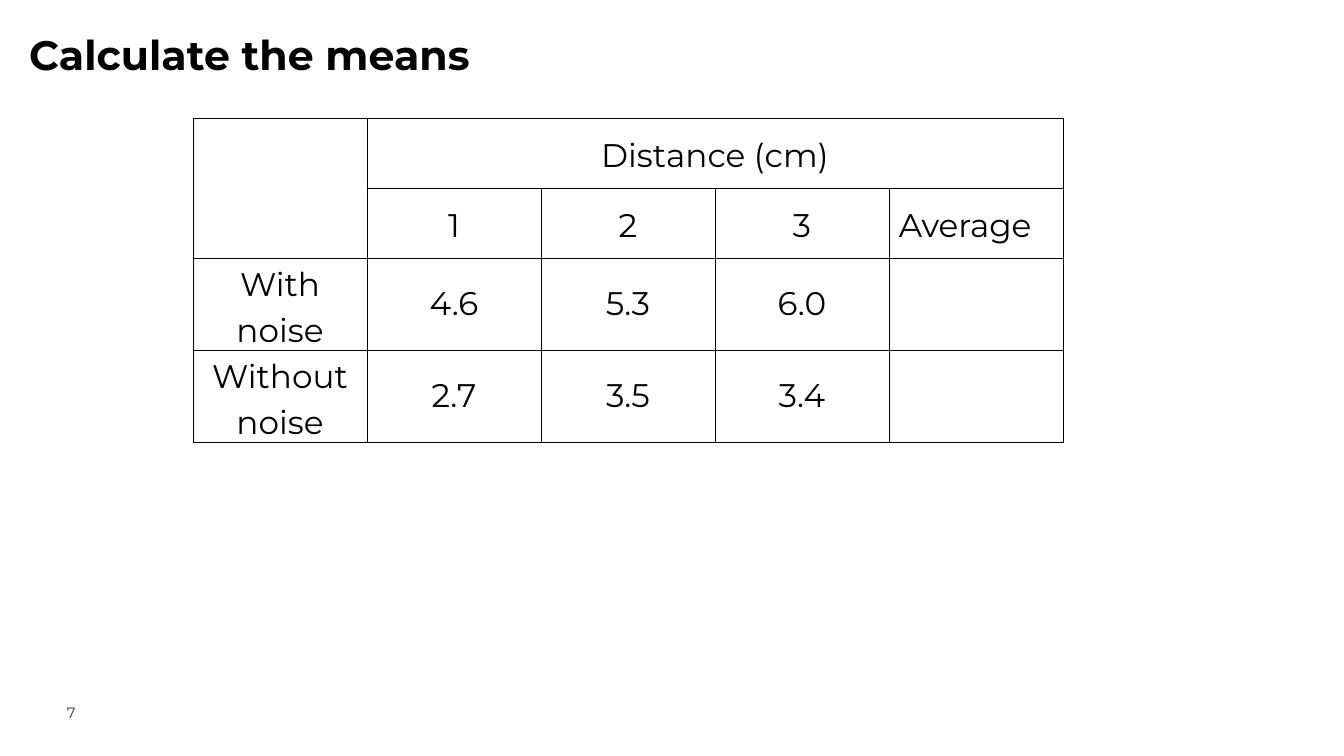
"""Build the slide with a table of distances, with and without noise, whose means are to be found."""
from dataclasses import dataclass

from lxml.etree import SubElement
from pptx import Presentation
from pptx.dml.color import RGBColor as RGB
from pptx.enum.text import MSO_ANCHOR as ANCHOR, PP_ALIGN as ALIGN
from pptx.oxml import parse_xml
from pptx.oxml.ns import nsdecls, qn
from pptx.util import Pt

PX = 13607


@dataclass(frozen=True)
class Theme:
    font: str = "Montserrat"
    ink: str = "000000"
    muted: str = "4B3241"
    title: int = 44
    body: int = 35
    number: int = 16
    rule: float = 0.75


THEME = Theme()
SLIDE_SIZE = (1344, 756)
LABELS = [
    {"text": "7", "box": (67, 704, 106, 26), "inset": 0,
     "font": {"size": THEME.number, "color": THEME.muted}},
    {"text": "Calculate the means", "box": (22, 22, 487, 81), "inset": 7,
     "font": {"size": THEME.title, "color": THEME.ink, "bold": True}},
]
DISTANCES = [
    ["", "Distance (cm)", "", "", ""],
    ["", "1", "2", "3", "Average"],
    ["With noise", "4.6", "5.3", "6.0", ""],
    ["Without noise", "2.7", "3.5", "3.4", ""],
]
MERGES = [((0, 0), (1, 0)), ((0, 1), (0, 4))]
TABLE_ORIGIN = (193, 118)
COLUMN_WIDTH = 174
ROW_HEIGHTS = [70, 70, 84, 84]
HEADER_ROWS = 2
HEADER_SPACING = 1.15
CELL_FORMAT = {"margin_left": 2 * PX, "margin_right": 2 * PX, "margin_top": PX,
               "margin_bottom": PX, "vertical_anchor": ANCHOR.MIDDLE}
AVERAGE_INDENT = 10


def emu(lengths):
    return [length * PX for length in lengths]


def apply(target, values):
    for name, value in values.items():
        setattr(target, name, value)


def write(paragraph, text, size, color, bold=False):
    run = paragraph.add_run()
    run.text = text
    apply(run.font, {"name": THEME.font, "size": Pt(size), "bold": bold})
    run.font.color.rgb = RGB.from_string(color)


def add_label(slide, text, box, inset, font):
    frame = slide.shapes.add_textbox(*emu(box)).text_frame
    margins = {f"margin_{side}": inset * PX for side in ("left", "top", "right", "bottom")}
    apply(frame, {"word_wrap": True, **margins})
    write(frame.paragraphs[0], text, **font)


def draw_borders(cell):
    properties = cell._tc.get_or_add_tcPr()
    for position, side in enumerate(("lnL", "lnR", "lnT", "lnB")):
        line = parse_xml(f'<a:{side} {nsdecls("a")} w="{Pt(THEME.rule)}"/>')
        fill = SubElement(line, qn("a:solidFill"))
        SubElement(fill, qn("a:srgbClr"), val=THEME.ink)
        properties.insert(position, line)


def fill_cell(cell, text, row, column):
    apply(cell, CELL_FORMAT)
    cell.fill.background()
    draw_borders(cell)
    if not text:
        return
    paragraph = cell.text_frame.paragraphs[0]
    paragraph.alignment = ALIGN.CENTER
    if row < HEADER_ROWS or column == 0:
        paragraph.line_spacing = HEADER_SPACING
    if text == "Average":
        paragraph.alignment = ALIGN.LEFT
        cell.margin_left = AVERAGE_INDENT * PX
    write(paragraph, text, THEME.body, THEME.ink)


def add_distances(slide):
    columns = len(DISTANCES[0])
    size = (COLUMN_WIDTH * columns, sum(ROW_HEIGHTS))
    table = slide.shapes.add_table(len(DISTANCES), columns, *emu(TABLE_ORIGIN + size)).table
    apply(table, {"first_row": False, "horz_banding": False})
    for row, height in zip(table.rows, ROW_HEIGHTS):
        row.height = height * PX
    for first, last in MERGES:
        table.cell(*first).merge(table.cell(*last))
    for row, texts in enumerate(DISTANCES):
        for column, text in enumerate(texts):
            fill_cell(table.cell(row, column), text, row, column)


def main():
    deck = Presentation()
    deck.slide_width, deck.slide_height = emu(SLIDE_SIZE)
    slide = deck.slides.add_slide(deck.slide_layouts[6])
    for label in LABELS:
        add_label(slide, **label)
    add_distances(slide)
    deck.save("out.pptx")


if __name__ == "__main__":
    main()
